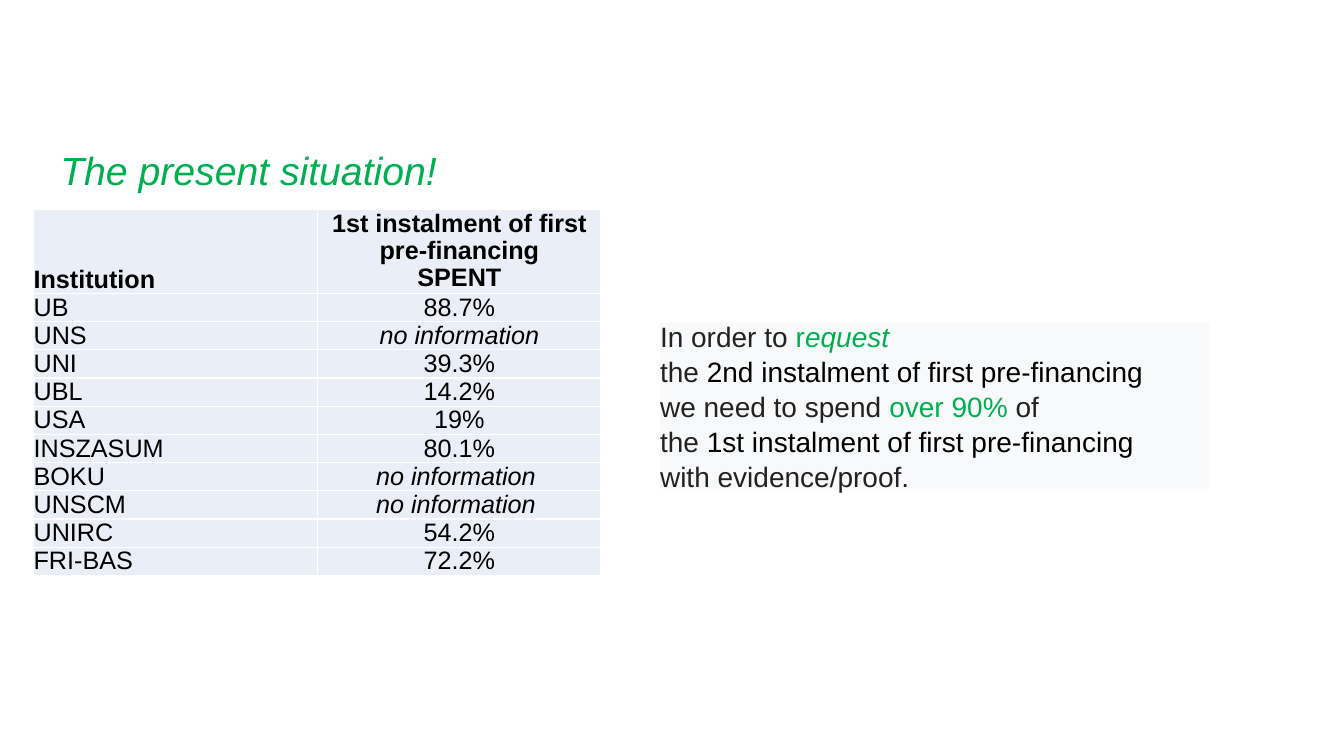
"""Build a slide on how much of the first pre-financing each institution has spent."""
from typing import Any, NamedTuple

from lxml import etree
from pptx import Presentation
from pptx.dml.color import RGBColor
from pptx.enum.shapes import MSO_SHAPE
from pptx.enum.text import MSO_ANCHOR, PP_ALIGN
from pptx.oxml.ns import qn
from pptx.util import Pt

LEFT, CENTER = PP_ALIGN.LEFT, PP_ALIGN.CENTER
BOTTOM, MIDDLE = MSO_ANCHOR.BOTTOM, MSO_ANCHOR.MIDDLE
RECTANGLE = MSO_SHAPE.RECTANGLE
COLORS = {
    "black": "000000",
    "charcoal": "222222",
    "green": "00B050",
    "cell": "EAEFF7",
    "panel": "F8F9FA",
    "border": "FFFFFF",
}
NO_MARGINS = {"margin_left": 0, "margin_right": 0, "margin_top": 0, "margin_bottom": 0}
HEADER_HEIGHT, ROW_HEIGHT = 60.4, 20.15
COLUMN_WIDTHS = (203, 202.3)


class Span(NamedTuple):
    text: str
    color: str = "black"
    bold: bool = False
    italic: bool = False


class Spending(NamedTuple):
    institution: str
    spent: str


SPENDINGS = [
    Spending("UB", "88.7%"),
    Spending("UNS", "no information"),
    Spending("UNI", "39.3%"),
    Spending("UBL", "14.2%"),
    Spending("USA", "19%"),
    Spending("INSZASUM", "80.1%"),
    Spending("BOKU", "no information "),
    Spending("UNSCM", "no information "),
    Spending("UNIRC", "54.2%"),
    Spending("FRI-BAS", "72.2%"),
]
REQUEST_LINES = [
    [Span("In order to ", "charcoal"), Span("r", "green"), Span("equest", "green", italic=True)],
    [Span("the ", "charcoal"), Span("2nd instalment of first pre-financing")],
    [Span("we need to spend ", "charcoal"), Span("over 90% ", "green"), Span("of", "charcoal")],
    [Span("the ", "charcoal"), Span("1st instalment of first pre-financing")],
    [Span("with evidence/proof.", "charcoal")],
]


def apply_format(target: Any, values: dict[str, Any]) -> None:
    """Set each named attribute on the target."""
    for name, value in values.items():
        setattr(target, name, value)


def write_lines(frame: Any, lines: list[list[Span]], size: float,
                align: Any = LEFT, spacing: float = 1.0) -> None:
    """Write each list of spans as one paragraph."""
    for index, spans in enumerate(lines):
        paragraph = frame.add_paragraph() if index else frame.paragraphs[0]
        apply_format(paragraph, {"alignment": align, "line_spacing": spacing})
        for span in spans:
            run = paragraph.add_run()
            run.text = span.text
            apply_format(run.font, {"name": "Arial", "size": Pt(size),
                                    "bold": span.bold, "italic": span.italic})
            run.font.color.rgb = RGBColor.from_string(COLORS[span.color])


def style_cell(cell: Any, anchor: Any) -> None:
    """Give a cell its fill, margins, anchor and thin borders."""
    apply_format(cell, {**NO_MARGINS, "vertical_anchor": anchor})
    cell.fill.solid()
    cell.fill.fore_color.rgb = RGBColor.from_string(COLORS["cell"])
    properties = cell._tc.get_or_add_tcPr()
    for position, side in enumerate(("a:lnL", "a:lnR", "a:lnT", "a:lnB")):
        border = etree.Element(qn(side), w=str(Pt(1)))
        fill = etree.SubElement(border, qn("a:solidFill"))
        etree.SubElement(fill, qn("a:srgbClr"), val=COLORS["border"])
        properties.insert(position, border)


def add_spending_table(slide: Any) -> None:
    """Draw the table of institutions and their spending."""
    height = HEADER_HEIGHT + ROW_HEIGHT * len(SPENDINGS)
    table = slide.shapes.add_table(len(SPENDINGS) + 1, 2, Pt(24), Pt(149.3),
                                   Pt(sum(COLUMN_WIDTHS)), Pt(height)).table
    for column, width in zip(table.columns, COLUMN_WIDTHS):
        column.width = Pt(width)
    header = ([[Span("Institution", bold=True)]],
              [[Span("1st instalment of first pre-financing", bold=True)],
               [Span("SPENT", bold=True)]])
    body = [([[Span(entry.institution)]],
             [[Span(entry.spent, italic=entry.spent.startswith("no"))]])
            for entry in SPENDINGS]
    for row_index, row in enumerate([header, *body]):
        table.rows[row_index].height = Pt(ROW_HEIGHT if row_index else HEADER_HEIGHT)
        for column_index, lines in enumerate(row):
            cell = table.cell(row_index, column_index)
            style_cell(cell, MIDDLE if (row_index, column_index) == (0, 1) else BOTTOM)
            write_lines(cell.text_frame, lines, 18, CENTER if column_index else LEFT, 0.97)


def add_title(slide: Any) -> None:
    """Draw the slide title."""
    title = slide.shapes.add_textbox(Pt(36), Pt(102.5), Pt(480), Pt(39.4))
    apply_format(title.text_frame, {"word_wrap": True, "vertical_anchor": BOTTOM})
    write_lines(title.text_frame, [[Span("The present situation!", "green", italic=True)]], 28)


def add_request_panel(slide: Any) -> None:
    """Draw the panel with the condition for the next request."""
    panel = slide.shapes.add_shape(RECTANGLE, Pt(471.5), Pt(230.1), Pt(393), Pt(119))
    panel.shadow.inherit = False
    panel.fill.solid()
    panel.fill.fore_color.rgb = RGBColor.from_string(COLORS["panel"])
    panel.line.fill.background()
    apply_format(panel.text_frame, {**NO_MARGINS, "word_wrap": True, "vertical_anchor": MIDDLE})
    write_lines(panel.text_frame, REQUEST_LINES, 20, spacing=1.04)


def main() -> None:
    """Build and save the presentation."""
    presentation = Presentation()
    apply_format(presentation, {"slide_width": Pt(960), "slide_height": Pt(540)})
    slide = presentation.slides.add_slide(presentation.slide_layouts[6])
    add_spending_table(slide)
    add_title(slide)
    add_request_panel(slide)
    presentation.save("out.pptx")


if __name__ == "__main__":
    main()
